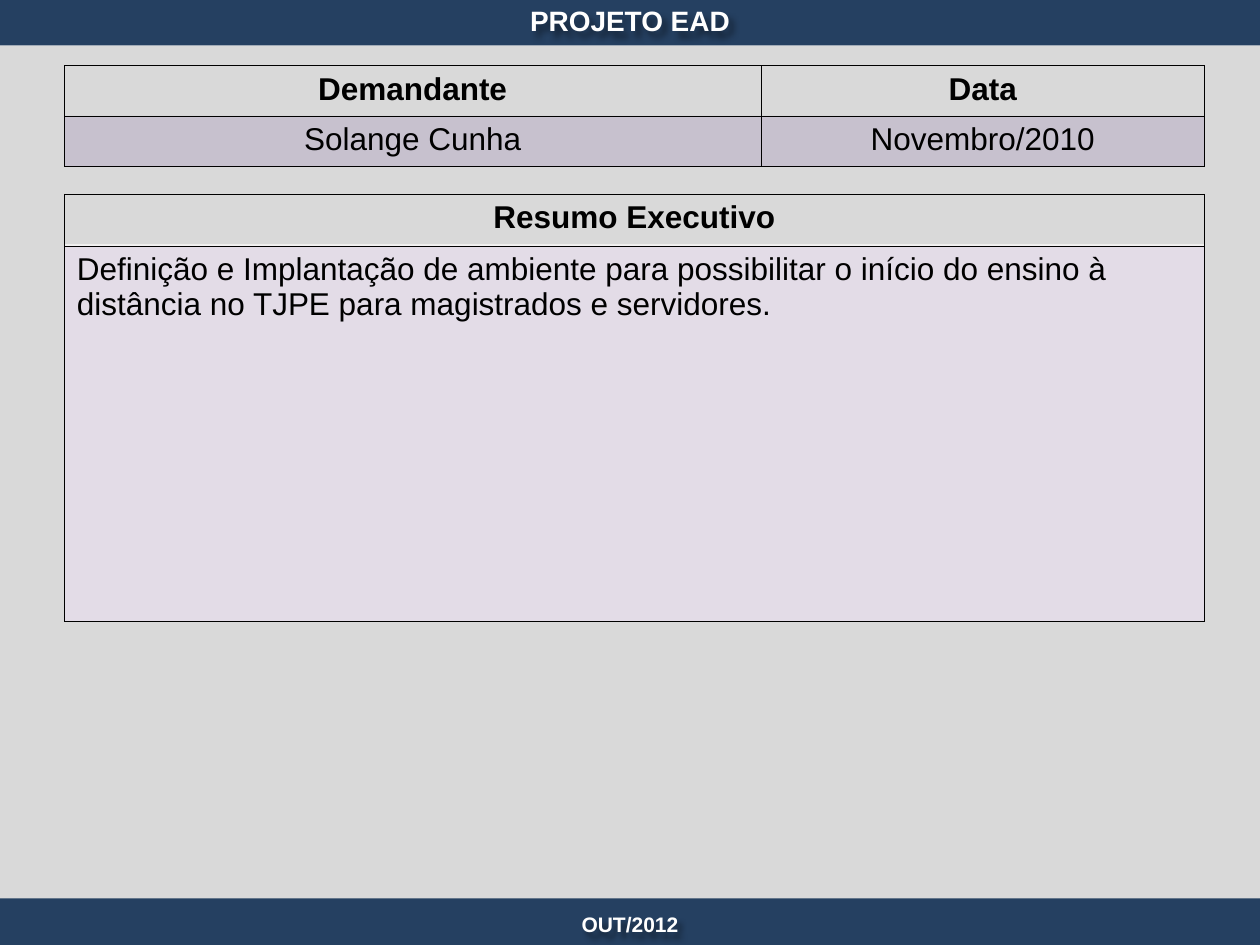
from lxml.etree import SubElement
from pptx import Presentation
from pptx.dml.color import RGBColor
from pptx.enum.shapes import MSO_SHAPE
from pptx.enum.text import MSO_ANCHOR, PP_ALIGN
from pptx.oxml import parse_xml
from pptx.oxml.ns import nsdecls, qn
from pptx.util import Inches, Pt

NAVY = RGBColor(0x25, 0x40, 0x61)
GREY = RGBColor(0xD9, 0xD9, 0xD9)
CREAM = RGBColor(0xFC, 0xFB, 0xF9)
PURPLE = RGBColor(0x80, 0x64, 0xA2)
WHITE = RGBColor(0xFF, 0xFF, 0xFF)
BLACK = RGBColor(0, 0, 0)

SHADOW = (f'<a:effectLst {nsdecls("a")}><a:outerShdw blurRad="38100" dist="38100" '
          'dir="2700000" algn="tl"><a:srgbClr val="000000"><a:alpha val="43000"/>'
          '</a:srgbClr></a:outerShdw></a:effectLst>')


def write(frame, text, size=18, color=BLACK, bold=False, align=PP_ALIGN.CENTER):
    frame.word_wrap = True
    paragraph = frame.paragraphs[0]
    paragraph.alignment = align
    run = paragraph.add_run()
    run.text = text
    run.font.name, run.font.size, run.font.bold = "Arial", Pt(size), bold
    run.font.color.rgb = color


def style_cell(cell, tinted):
    """Give the cell thin black borders and, if tinted, a 20 % purple fill."""
    properties = cell._tc.get_or_add_tcPr()
    if tinted:
        cell.fill.solid()
        cell.fill.fore_color.rgb = PURPLE
        tint = properties.find(qn("a:solidFill")).find(qn("a:srgbClr"))
        SubElement(tint, qn("a:alpha"), val="20000")
    else:
        cell.fill.background()
    for position, side in enumerate(("lnL", "lnR", "lnT", "lnB")):
        properties.insert(position, parse_xml(
            f'<a:{side} {nsdecls("a")} w="3175"><a:solidFill><a:srgbClr val="{BLACK}"/>'
            f'</a:solidFill></a:{side}>'))


deck = Presentation()
deck.slide_width, deck.slide_height = Inches(10), Inches(7.5)
slide = deck.slides.add_slide(deck.slide_layouts[5])
shapes = slide.shapes

WIDTH = deck.slide_width
BAR = Inches(0.37)
LEFT, TABLE_WIDTH = Inches(0.51), Inches(9.05)
FOOTER_TOP = deck.slide_height - BAR

# Background bands and the panel behind the summary
for left, top, width, height, color in (
    (0, Inches(0.36), WIDTH, Inches(6.85), GREY),
    (0, FOOTER_TOP, WIDTH, BAR, NAVY),
    (0, Inches(-0.01), WIDTH, BAR, NAVY),
    (LEFT, Inches(1.94), TABLE_WIDTH, Inches(2.99), CREAM),
):
    band = shapes.add_shape(MSO_SHAPE.RECTANGLE, left, top, width, height)
    band.shadow.inherit = False
    band.fill.solid()
    band.fill.fore_color.rgb = color
    band.line.fill.background()

# Title and footer, in front of the bands, with shadowed lettering
title = shapes.title
title.left, title.top, title.width, title.height = 0, Inches(-0.11), WIDTH, Inches(0.55)
shapes._spTree.append(title._element)
footer = shapes.add_textbox(0, Inches(7.14), WIDTH, Inches(0.39))
for label, text, size in ((title, "PROJETO EAD", 16), (footer, "OUT/2012", 12)):
    label.fill.background()
    label._element.spPr.append(parse_xml(SHADOW))
    label.text_frame.vertical_anchor = MSO_ANCHOR.MIDDLE
    write(label.text_frame, text, size=size, color=WHITE, bold=True)

# Request and summary tables: a bold heading row over a tinted row
SUMMARY = ("Definição e Implantação de ambiente para possibilitar o início do ensino "
           "à distância no TJPE para magistrados e servidores.")
for top, columns, rows, texts, body_align in (
    (0.52, (5.53, 3.52), (0.39, 0.39),
     (("Demandante", "Data"), ("Solange Cunha", "Novembro/2010")), PP_ALIGN.CENTER),
    (1.54, (9.05,), (0.41, 2.98), (("Resumo Executivo",), (SUMMARY,)), PP_ALIGN.LEFT),
):
    table = shapes.add_table(len(rows), len(columns), LEFT, Inches(top),
                             TABLE_WIDTH, Inches(sum(rows))).table
    table.first_row = table.horz_banding = False
    for column, width in zip(table.columns, columns):
        column.width = Inches(width)
    for r, height in enumerate(rows):
        table.rows[r].height = Inches(height)
        heading = r == 0
        for c, text in enumerate(texts[r]):
            cell = table.cell(r, c)
            style_cell(cell, tinted=not heading)
            write(cell.text_frame, text, bold=heading,
                  align=PP_ALIGN.CENTER if heading else body_align)

deck.save("out.pptx")
